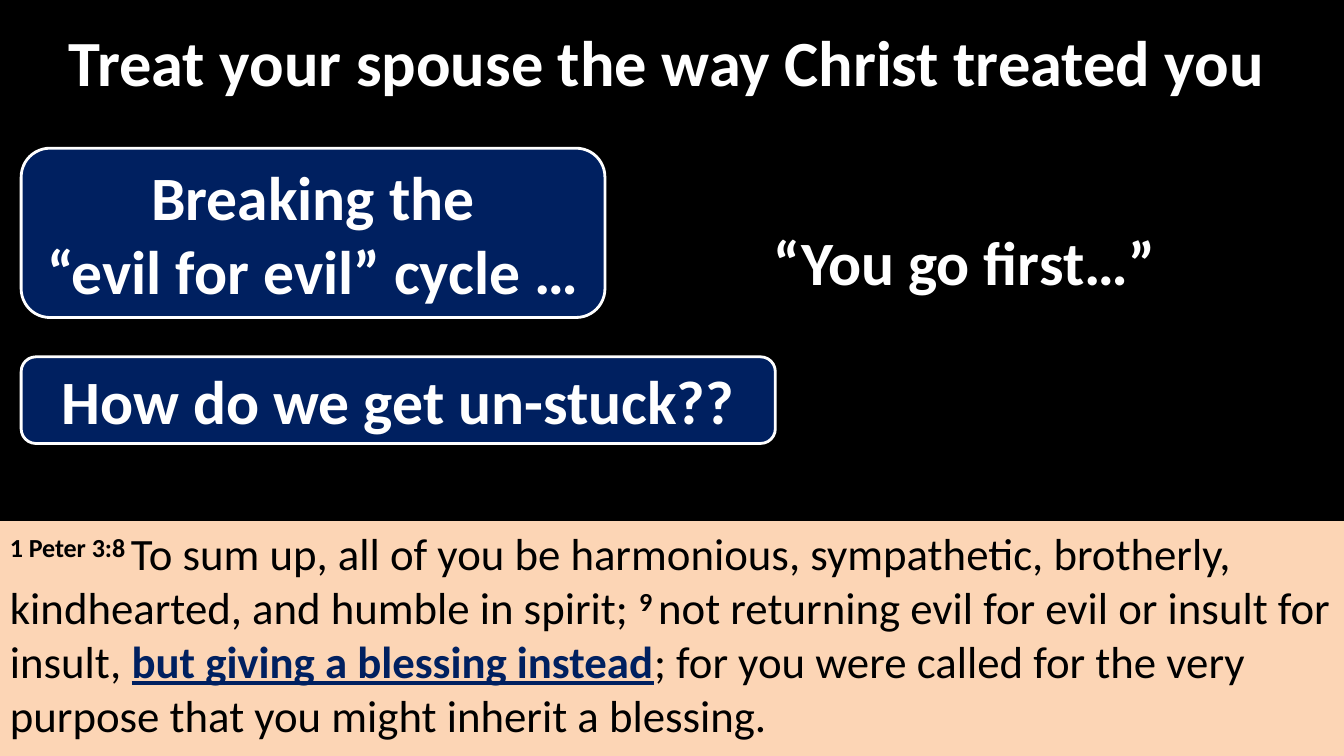
from pptx import Presentation
from pptx.dml.color import RGBColor
from pptx.enum.shapes import MSO_SHAPE
from pptx.enum.text import MSO_ANCHOR, MSO_AUTO_SIZE, PP_ALIGN
from pptx.util import Inches, Pt

CALLOUT = MSO_SHAPE.ROUNDED_RECTANGULAR_CALLOUT
RECTANGLE = MSO_SHAPE.RECTANGLE
MIDDLE = MSO_ANCHOR.MIDDLE
TOP = MSO_ANCHOR.TOP
NO_FIT = MSO_AUTO_SIZE.NONE
LEFT = PP_ALIGN.LEFT
CENTER = PP_ALIGN.CENTER

BLACK = "000000"
WHITE = "FFFFFF"
NAVY = "002060"
PEACH = "FCD5B5"
TAIL = (-0.22, 0.5, 0.17)

VERSE = [
    ("1 Peter 3:8 ", "number"),
    ("To sum up, all of you be harmonious, sympathetic, brotherly, "
     "kindhearted, and humble in spirit; ", "plain"),
    ("9 ", "number"),
    ("not returning evil for evil or insult for insult, ", "plain"),
    ("but giving a blessing instead", "key"),
    ("; for you were called for the very purpose that you might "
     "inherit a blessing.", "plain"),
]


def rgb(value):
    return RGBColor.from_string(value)


def style(paragraph, size, color, bold, align):
    paragraph.alignment = align
    font = paragraph.font
    font.name = "Calibri"
    font.size = Pt(size)
    font.bold = bold
    font.color.rgb = rgb(color)


def add_box(slide, preset, box, fill=None, outline=None):
    shape = slide.shapes.add_shape(preset, *map(Inches, box))
    shape.shadow.inherit = False
    if fill:
        shape.fill.solid()
        shape.fill.fore_color.rgb = rgb(fill)
    else:
        shape.fill.background()
    if outline:
        shape.line.color.rgb = rgb(outline)
        shape.line.width = Pt(2)
    else:
        shape.line.fill.background()
    shape.text_frame.word_wrap = True
    return shape


def place_title(slide, box, text):
    title = slide.shapes.title
    title.left, title.top, title.width, title.height = map(Inches, box)
    frame = title.text_frame
    frame.text = text
    frame.auto_size = NO_FIT
    frame.vertical_anchor = MIDDLE
    style(frame.paragraphs[0], 46, WHITE, True, LEFT)


def add_callout(slide, box, text, fill=None, outline=None):
    callout = add_box(slide, CALLOUT, box, fill, outline)
    for index, value in enumerate(TAIL):
        callout.adjustments[index] = value
    frame = callout.text_frame
    frame.text = text
    frame.vertical_anchor = MIDDLE
    for paragraph in frame.paragraphs:
        style(paragraph, 44, WHITE, True, CENTER)


def add_scripture(slide, box, verse):
    frame = add_box(slide, RECTANGLE, box, PEACH).text_frame
    frame.vertical_anchor = TOP
    passage = frame.paragraphs[0]
    style(passage, 32, BLACK, False, LEFT)
    for text, role in verse:
        run = passage.add_run()
        run.text = text
        run.font.color.rgb = rgb(NAVY if role == "key" else BLACK)
        run.font.bold = role != "plain"
        if role == "key":
            run.font.underline = True
        if role == "number":
            run._r.get_or_add_rPr().set("baseline", "30000")


def build_slide(deck):
    slide = deck.slides.add_slide(deck.slide_layouts[5])
    slide.background.fill.solid()
    slide.background.fill.fore_color.rgb = rgb(BLACK)
    place_title(slide, (0.58, 0.08, 12.17, 1.05),
                "Treat your spouse the way Christ treated you")
    add_callout(slide, (0.21, 1.47, 5.79, 1.68),
                "Breaking the\n“evil for evil” cycle …", NAVY, WHITE)
    add_callout(slide, (6, 2.16, 7.13, 0.86), "“You go first…”")
    add_callout(slide, (0.21, 3.54, 7.48, 0.86),
                "How do we get un-stuck??", NAVY, WHITE)
    add_scripture(slide, (0, 5.17, 13.33, 2.33), VERSE)


def main():
    deck = Presentation()
    deck.slide_width = Inches(13.33)
    deck.slide_height = Inches(7.5)
    build_slide(deck)
    deck.save("out.pptx")


if __name__ == "__main__":
    main()
